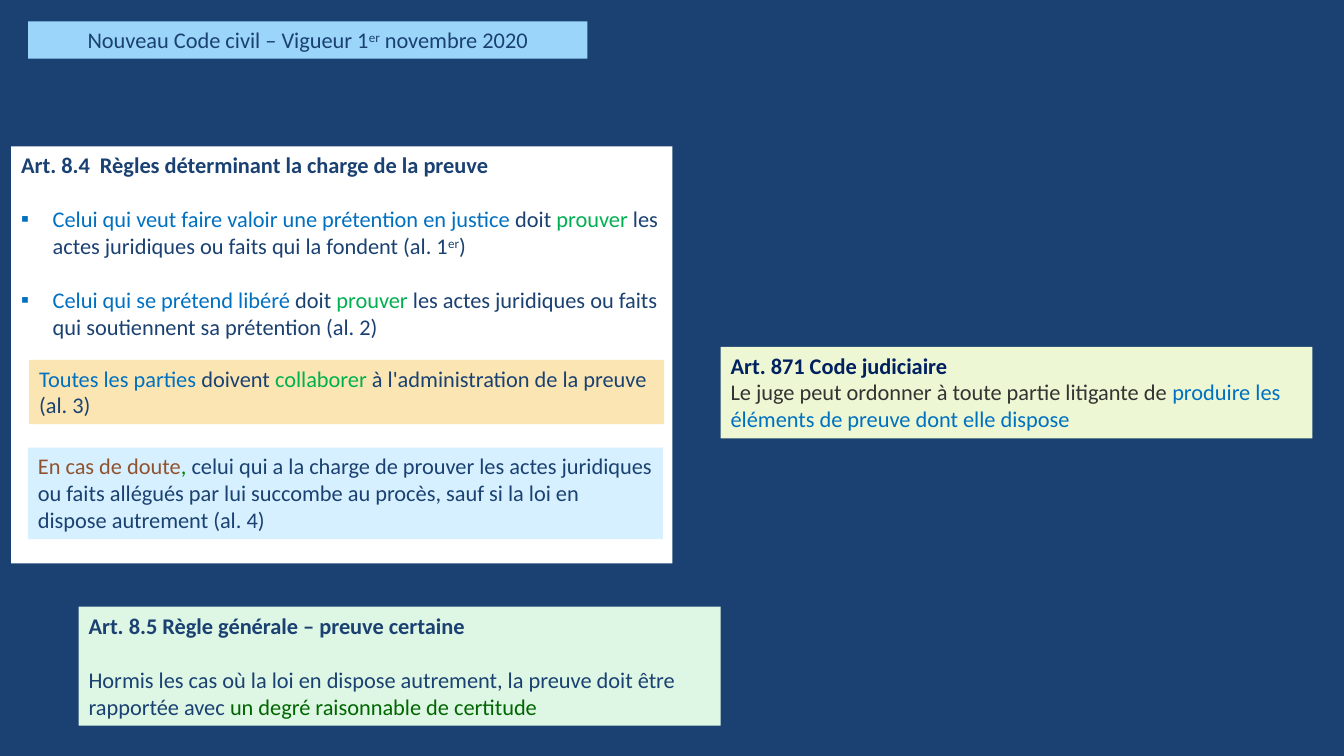
import pptx
import pptx.dml.color
import pptx.enum.shapes
import pptx.enum.text
import pptx.oxml
import pptx.oxml.ns
import pptx.util

COLORS = {
    "navy": "1A4171", "sky": "9BD5FA", "white": "FFFFFF", "pale_blue": "D6F0FF",
    "mint": "DEF6E4", "sand": "FBE6B3", "lime": "EDF7D3", "blue": "0070C0",
    "green": "00B050", "leaf": "008000", "forest": "006600", "brown": "91522F",
    "midnight": "002060", "charcoal": "333333",
}
FONT = {"name": "Calibri", "size": pptx.util.Pt(16)}
FRAME = {
    "word_wrap": True,
    "auto_size": pptx.enum.text.MSO_AUTO_SIZE.NONE,
    "vertical_anchor": pptx.enum.text.MSO_ANCHOR.TOP,
    "margin_left": pptx.util.Pt(7.2), "margin_right": pptx.util.Pt(7.2),
    "margin_top": pptx.util.Pt(3.6), "margin_bottom": pptx.util.Pt(3.6),
}
BLANK_LINE = 19.5
BULLET_INDENT = 22.5


def set_values(target, values):
    for name, value in values.items():
        setattr(target, name, value)


def rgb(color):
    return pptx.dml.color.RGBColor.from_string(COLORS[color])


class CivilCodeSlide:
    def __init__(self, presentation):
        self.slide = presentation.slides.add_slide(presentation.slide_layouts[1])
        background = self.slide.background.fill
        background.solid()
        background.fore_color.rgb = rgb("navy")

    def title(self, bounds, fill, runs):
        shape = self.slide.shapes.title
        self.format_box(shape, bounds, fill)
        self.paragraph(shape, runs, alignment=pptx.enum.text.PP_ALIGN.CENTER)

    def body(self, bounds, fill, heading, items):
        shape = self.slide.placeholders[1]
        self.format_box(shape, bounds, fill)
        self.paragraph(shape, heading, bold=True)
        for item in items:
            self.paragraph(shape, item, space_before=BLANK_LINE, bullet="blue")

    def box(self, bounds, fill, runs, heading=None, gap=0):
        """Add a filled text box, its optional bold heading set apart by gap."""
        shape = self.slide.shapes.add_shape(
            pptx.enum.shapes.MSO_SHAPE.RECTANGLE, *map(pptx.util.Pt, bounds))
        shape.shadow.inherit = False
        self.format_box(shape, bounds, fill)
        if heading:
            self.paragraph(shape, heading, bold=True)
        self.paragraph(shape, runs, space_before=gap)

    def format_box(self, shape, bounds, fill):
        lengths = map(pptx.util.Pt, bounds)
        set_values(shape, dict(zip(("left", "top", "width", "height"), lengths)))
        shape.fill.solid()
        shape.fill.fore_color.rgb = rgb(fill)
        shape.line.fill.background()
        set_values(shape.text_frame, FRAME)

    def paragraph(self, shape, runs, bold=False, space_before=0, bullet=None,
                  alignment=pptx.enum.text.PP_ALIGN.LEFT):
        """Write (text, color) runs; a third item, True, makes a superscript."""
        frame = shape.text_frame
        paragraph = frame.add_paragraph() if frame.text else frame.paragraphs[0]
        set_values(paragraph, {
            "alignment": alignment, "line_spacing": 1.0,
            "space_before": pptx.util.Pt(space_before),
            "space_after": pptx.util.Pt(0),
        })
        self.bullet(paragraph, bullet)
        for text, color, *superscript in runs:
            run = paragraph.add_run()
            run.text = text
            set_values(run.font, {**FONT, "bold": bold})
            run.font.color.rgb = rgb(color)
            if superscript:
                run._r.get_or_add_rPr().set("baseline", "30000")

    def bullet(self, paragraph, color):
        """Give the paragraph a square bullet, or none when color is None."""
        indent = pptx.util.Pt(BULLET_INDENT if color else 0)
        properties = paragraph._p.get_or_add_pPr()
        properties.set("marL", str(indent))
        properties.set("indent", str(-indent))
        namespace = pptx.oxml.ns.nsdecls("a")
        if color:
            parts = (f'<a:buClr {namespace}><a:srgbClr val="{COLORS[color]}"/></a:buClr>',
                     f'<a:buFont {namespace} typeface="{FONT["name"]}"/>',
                     f'<a:buChar {namespace} char="▪"/>')
        else:
            parts = (f"<a:buNone {namespace}/>",)
        for part in parts:
            properties.append(pptx.oxml.parse_xml(part))


def main():
    presentation = pptx.Presentation()
    set_values(presentation, {"slide_width": pptx.util.Pt(960),
                              "slide_height": pptx.util.Pt(540)})
    slide = CivilCodeSlide(presentation)

    slide.title((20, 15.3, 399.6, 26.6), "sky", [
        ("Nouveau Code civil – Vigueur 1", "navy"), ("er", "navy", True),
        (" novembre 2020", "navy")])

    slide.body(
        (7.9, 104.5, 472.3, 298), "white",
        [("Art. 8.4  Règles déterminant la charge de la preuve", "navy")],
        [[("Celui qui veut faire valoir une prétention en justice ", "blue"),
          ("doit ", "navy"), ("prouver", "green"),
          (" les actes juridiques ou faits qui la fondent (al. 1", "navy"),
          ("er", "navy", True), (")", "navy")],
         [("Celui qui se prétend libéré ", "blue"),
          ("doit ", "navy"), ("prouver", "green"),
          (" les actes juridiques ou faits qui soutiennent sa prétention (al. 2)", "navy")]])

    slide.box((20, 319.7, 453.6, 65.5), "pale_blue", [
        ("En cas de doute", "brown"), (", ", "leaf"),
        ("celui qui a la charge de prouver les actes juridiques ou faits allégués "
         "par lui succombe au procès, sauf si la loi en dispose autrement (al. 4)", "navy")])

    slide.box(
        (56.2, 433.4, 458.6, 85), "mint",
        [("Hormis les cas où la loi en dispose autrement, la preuve doit être "
          "rapportée avec ", "navy"),
         ("un degré raisonnable de certitude", "forest")],
        heading=[("Art. 8.5 Règle générale – preuve certaine", "navy")], gap=BLANK_LINE)

    slide.box((20.9, 257, 453.6, 46), "sand", [
        ("Toutes les parties ", "blue"), ("doivent ", "navy"), ("collaborer", "green"),
        (" à l'administration de la preuve (al. 3)", "navy")])

    slide.box(
        (514.8, 247.7, 422.6, 65.5), "lime",
        [("Le juge peut ordonner à toute partie litigante de ", "charcoal"),
         ("produire les éléments de preuve dont elle dispose", "blue")],
        heading=[("Art. 871 Code judiciaire", "midnight")])

    presentation.save("out.pptx")


if __name__ == "__main__":
    main()
